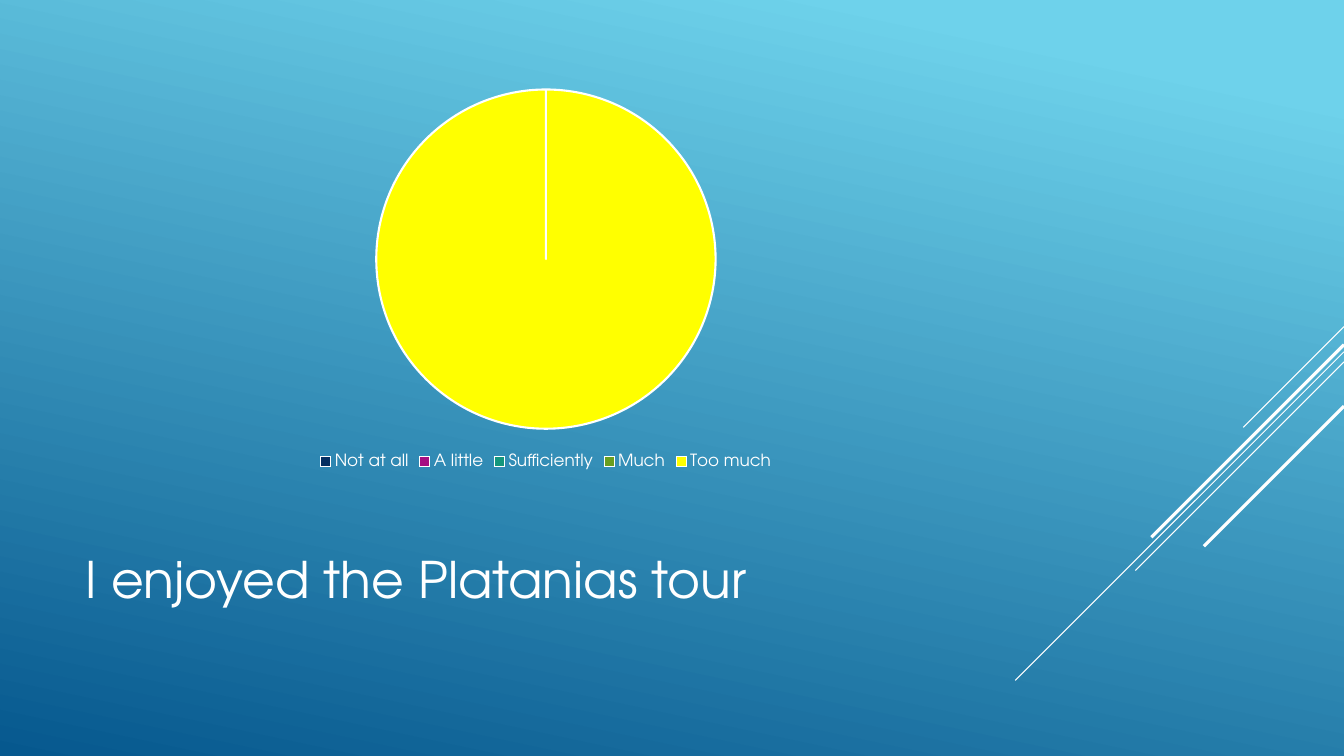
"""Build the survey slide about the Platanias tour."""
from typing import NamedTuple

from lxml import etree
from pptx import Presentation
from pptx.chart.data import CategoryChartData
from pptx.dml.color import RGBColor
from pptx.enum.chart import XL_CHART_TYPE, XL_LEGEND_POSITION
from pptx.enum.shapes import MSO_CONNECTOR
from pptx.enum.text import MSO_ANCHOR, PP_ALIGN
from pptx.oxml.ns import qn
from pptx.util import Inches, Pt

PIE = XL_CHART_TYPE.PIE
BOTTOM = XL_LEGEND_POSITION.BOTTOM
STRAIGHT = MSO_CONNECTOR.STRAIGHT
MIDDLE = MSO_ANCHOR.MIDDLE
LEFT = PP_ALIGN.LEFT

WIDTH, HEIGHT = Inches(13.33), Inches(7.5)
MARGIN, CONTENT_WIDTH = Inches(0.75), Inches(9.33)
FONT = "TeX Gyre Adventor"
COLOURS = {"sky": "6ED2EB", "deep": "06588E", "white": "FFFFFF"}
GRADIENT = ((0.1, "sky"), (1.0, "deep"))


class Ray(NamedTuple):
    """A 45-degree line running down and left from the right edge."""
    top: float
    reach: float
    weight: float


class Answer(NamedTuple):
    """One survey answer with its share and slice colour."""
    label: str
    percent: int
    colour: str


RAYS = (
    Ray(3.24, 1.0, 0.75),
    Ray(3.49, 3.26, 0.75),
    Ray(3.59, 2.07, 0.75),
    Ray(3.42, 1.91, 2.25),
    Ray(4.03, 1.39, 2.25),
)
ANSWERS = (
    Answer("Not at all", 0, "052F61"),
    Answer("A little", 0, "A50E82"),
    Answer("Sufficiently", 0, "14967C"),
    Answer("Much", 0, "6A9E1F"),
    Answer("Too much", 100, "FFFF00"),
)


def rgb(name: str) -> RGBColor:
    """Return a named colour."""
    return RGBColor.from_string(COLOURS[name])


def style_font(font, size: float) -> None:
    """Give a font the slide's typeface in white."""
    for attribute, value in {"name": FONT, "size": Pt(size), "bold": False}.items():
        setattr(font, attribute, value)
    font.color.rgb = rgb("white")


def paint_background(slide) -> None:
    """Fill the slide with the slanted blue gradient."""
    fill = slide.background.fill
    fill.gradient()
    fill.gradient_angle = 360 - 102
    for stop, (position, name) in zip(fill.gradient_stops, GRADIENT):
        stop.position = position
        stop.color.rgb = rgb(name)


def draw_ray(slide, ray: Ray) -> None:
    """Draw one diagonal line."""
    top, reach = Inches(ray.top), Inches(ray.reach)
    line = slide.shapes.add_connector(STRAIGHT, WIDTH, top, WIDTH - reach, top + reach)
    line.line.color.rgb = rgb("white")
    line.line.width = Pt(ray.weight)
    etree.SubElement(line._element.spPr, qn("a:effectLst"))


def write_title(slide, wording: str) -> None:
    """Place and format the title."""
    title = slide.shapes.title
    box = {"left": MARGIN, "top": Inches(4.91), "width": CONTENT_WIDTH, "height": Inches(1.65)}
    for attribute, value in box.items():
        setattr(title, attribute, value)
    frame = title.text_frame
    frame.text = wording
    frame.vertical_anchor = MIDDLE
    frame.paragraphs[0].alignment = LEFT
    style_font(frame.paragraphs[0].runs[0].font, 36)


def draw_pie(slide) -> None:
    """Chart the survey answers."""
    survey = CategoryChartData()
    survey.categories = [answer.label for answer in ANSWERS]
    survey.add_series("Series 1", [answer.percent for answer in ANSWERS])
    chart = slide.shapes.add_chart(
        PIE, MARGIN, MARGIN, CONTENT_WIDTH, Inches(3.95), survey).chart
    chart.has_title = False
    style_font(chart.font, 10)
    chart.has_legend = True
    chart.legend.position = BOTTOM
    chart.legend.include_in_layout = False
    style_font(chart.legend.font, 12)
    pie = chart.plots[0]
    pie.vary_by_categories = True
    for index, answer in enumerate(ANSWERS):
        wedge = pie.series[0].points[index].format
        wedge.fill.solid()
        wedge.fill.fore_color.rgb = RGBColor.from_string(answer.colour)
        wedge.line.color.rgb = rgb("white")
        wedge.line.width = Pt(1.5)


def main() -> None:
    """Assemble and save the slide."""
    deck = Presentation()
    deck.slide_width, deck.slide_height = WIDTH, HEIGHT
    slide = deck.slides.add_slide(deck.slide_layouts[5])
    paint_background(slide)
    for ray in RAYS:
        draw_ray(slide, ray)
    write_title(slide, "I enjoyed the Platanias tour")
    draw_pie(slide)
    deck.save("out.pptx")


if __name__ == "__main__":
    main()
